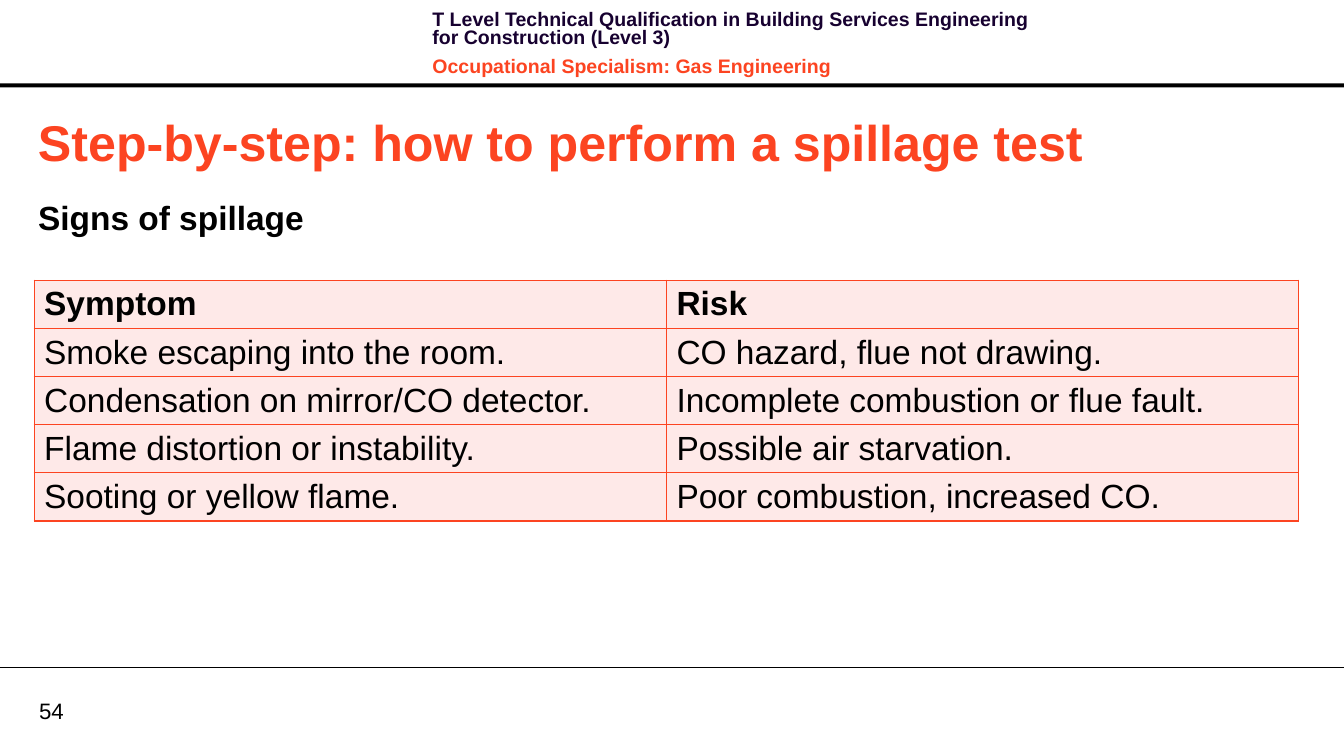
from dataclasses import dataclass

from lxml.etree import SubElement
from pptx import Presentation
from pptx.dml.color import RGBColor as RGB
from pptx.enum.shapes import MSO_CONNECTOR as CONNECTOR, MSO_SHAPE as SHAPE
from pptx.enum.text import MSO_ANCHOR as ANCHOR
from pptx.oxml.ns import qn
from pptx.util import Inches, Pt


@dataclass(frozen=True)
class Theme:
    font: str = "Arial"
    accent: str = "FC4421"
    navy: str = "170130"
    ink: str = "000000"
    tint: str = "FEE9E8"
    title: int = 36
    body: int = 24
    number: int = 16
    header: int = 14


THEME = Theme()
WIDTH, HEIGHT = 13.39, 7.48
ROWS = [
    ("Symptom", "Risk"),
    ("Smoke escaping into the room.", "CO hazard, flue not drawing."),
    ("Condensation on mirror/CO detector.", "Incomplete combustion or flue fault."),
    ("Flame distortion or instability.", "Possible air starvation."),
    ("Sooting or yellow flame.", "Poor combustion, increased CO."),
]


def set_attrs(obj, **values):
    for name, value in values.items():
        setattr(obj, name, value)


def write(p, text, size, color, bold=False, **spacing):
    r = p.add_run()
    r.text = text
    set_attrs(r.font, name=THEME.font, size=Pt(size), bold=bold)
    r.font.color.rgb = RGB.from_string(color)
    set_attrs(p, **spacing)


def add_text_frame(slide, box, anchor=ANCHOR.TOP, inset=(0, 0)):
    """Add a wrapping text box with (horizontal, vertical) insets."""
    tf = slide.shapes.add_textbox(*map(Inches, box)).text_frame
    x, y = map(Inches, inset)
    set_attrs(tf, word_wrap=True, vertical_anchor=anchor, margin_left=x,
              margin_right=x, margin_top=y, margin_bottom=y)
    return tf


def add_header(slide, box):
    left, top, width, height = box
    rule = 0.04
    sp = slide.shapes.add_shape(SHAPE.RECTANGLE, *map(
        Inches, (left, top + height - rule, width, rule)))
    sp.shadow.inherit = False
    sp.fill.solid()
    sp.fill.fore_color.rgb = RGB.from_string(THEME.ink)
    sp.line.fill.background()

    tf = add_text_frame(slide, (left + 4.21, top + 0.07, 6.37, 0.64),
                        inset=(0.1, 0.05))
    write(tf.paragraphs[0],
          "T Level Technical Qualification in Building Services Engineering "
          "for Construction (Level 3)",
          THEME.header, THEME.navy, True, line_spacing=Pt(13.1), space_after=Pt(4))
    write(tf.add_paragraph(), "Occupational Specialism: Gas Engineering",
          THEME.header, THEME.accent, True, line_spacing=Pt(13.1),
          space_before=Pt(4), space_after=Pt(4))


def add_headings(slide, box):
    left, top, width, height = box
    tf = add_text_frame(slide, (left, top, width, 0.71), ANCHOR.MIDDLE, (0.1, 0.05))
    write(tf.paragraphs[0], "Step-by-step: how to perform a spillage test",
          THEME.title, THEME.accent, True)
    tf = add_text_frame(slide, (left + 0.1, top + 0.87, 10.24, height - 0.87))
    write(tf.paragraphs[0], "Signs of spillage", THEME.body, THEME.ink, True,
          line_spacing=1.1, space_after=Pt(12))


def outline_cell(cell):
    """Draw the four cell borders; they must precede the fill in the XML."""
    props = cell._tc.get_or_add_tcPr()
    for side in ("lnL", "lnR", "lnT", "lnB"):
        ln = SubElement(props, qn(f"a:{side}"), w=str(Pt(1)))
        fill = SubElement(ln, qn("a:solidFill"))
        SubElement(fill, qn("a:srgbClr"), val=THEME.accent)


def add_symptom_table(slide, box):
    left, top, width, height = map(Inches, box)
    table = slide.shapes.add_table(len(ROWS), len(ROWS[0]),
                                   left, top, width, height).table
    set_attrs(table, first_row=False, horz_banding=False)
    for i, row in enumerate(ROWS):
        for j, text in enumerate(row):
            cell = table.cell(i, j)
            outline_cell(cell)
            cell.fill.solid()
            cell.fill.fore_color.rgb = RGB.from_string(THEME.tint)
            set_attrs(cell, vertical_anchor=ANCHOR.MIDDLE,
                      margin_top=Inches(0.04), margin_bottom=Inches(0.04))
            write(cell.text_frame.paragraphs[0], text, THEME.body, THEME.ink, i == 0)


def add_footer(slide, box):
    left, top, width, _ = box
    rule = slide.shapes.add_connector(CONNECTOR.STRAIGHT, *map(
        Inches, (left, top, left + width, top)))
    rule.line.color.rgb = RGB.from_string(THEME.ink)
    rule.line.width = Pt(0.75)
    SubElement(rule._element.spPr, qn("a:effectLst"))
    tf = add_text_frame(slide, (left + 0.39, top + 0.29, 0.64, 0.27), ANCHOR.MIDDLE)
    write(tf.paragraphs[0], "54", THEME.number, THEME.ink)


def main():
    prs = Presentation()
    set_attrs(prs, slide_width=Inches(WIDTH), slide_height=Inches(HEIGHT))
    slide = prs.slides.add_slide(prs.slide_layouts[6])
    add_header(slide, (0, 0, WIDTH, 0.87))
    add_headings(slide, (0.28, 1.05, 12.72, 1.4))
    add_symptom_table(slide, (0.34, 2.79, 12.6, 2.36))
    add_footer(slide, (0, 6.65, WIDTH, HEIGHT - 6.65))
    prs.save("out.pptx")


if __name__ == "__main__":
    main()
